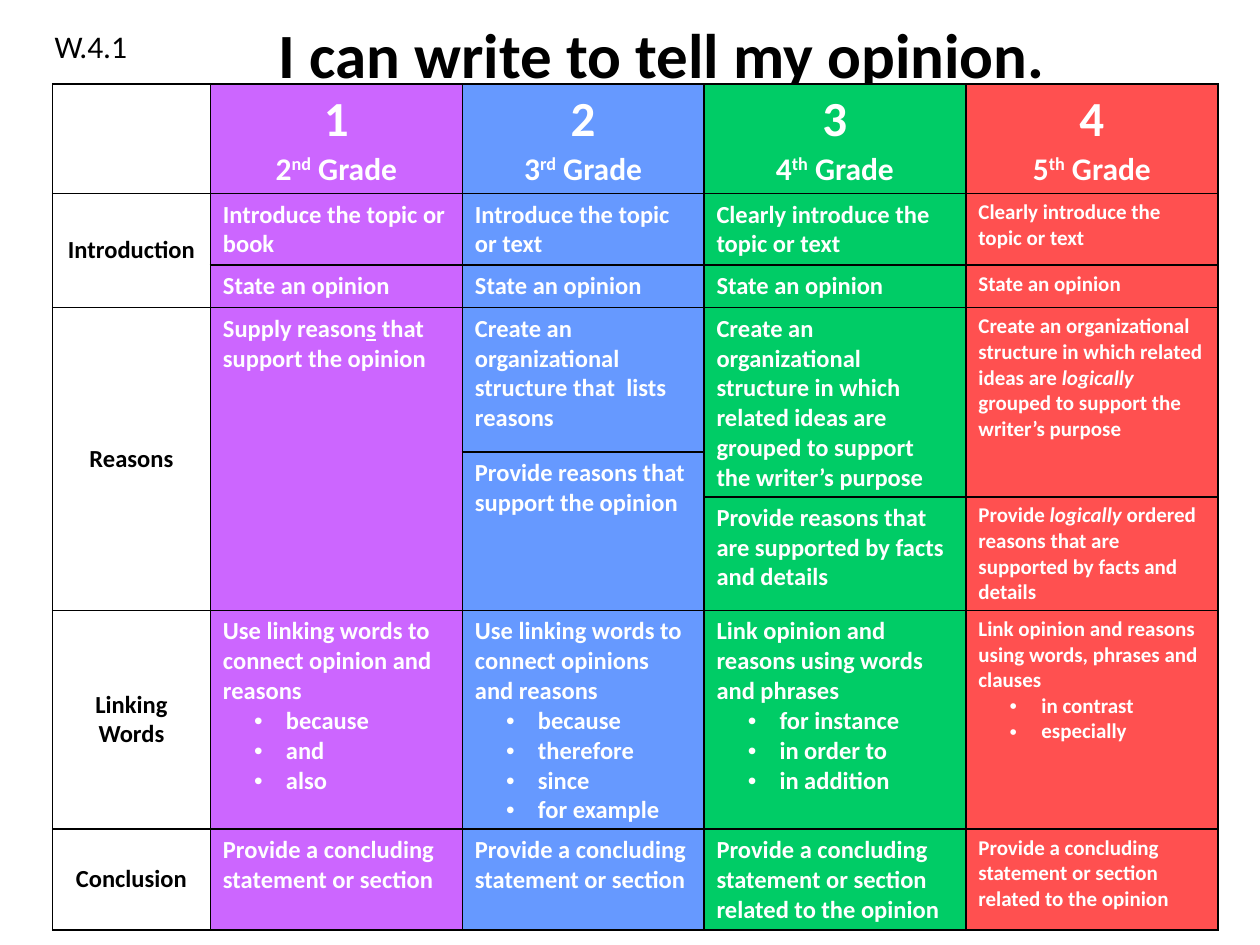
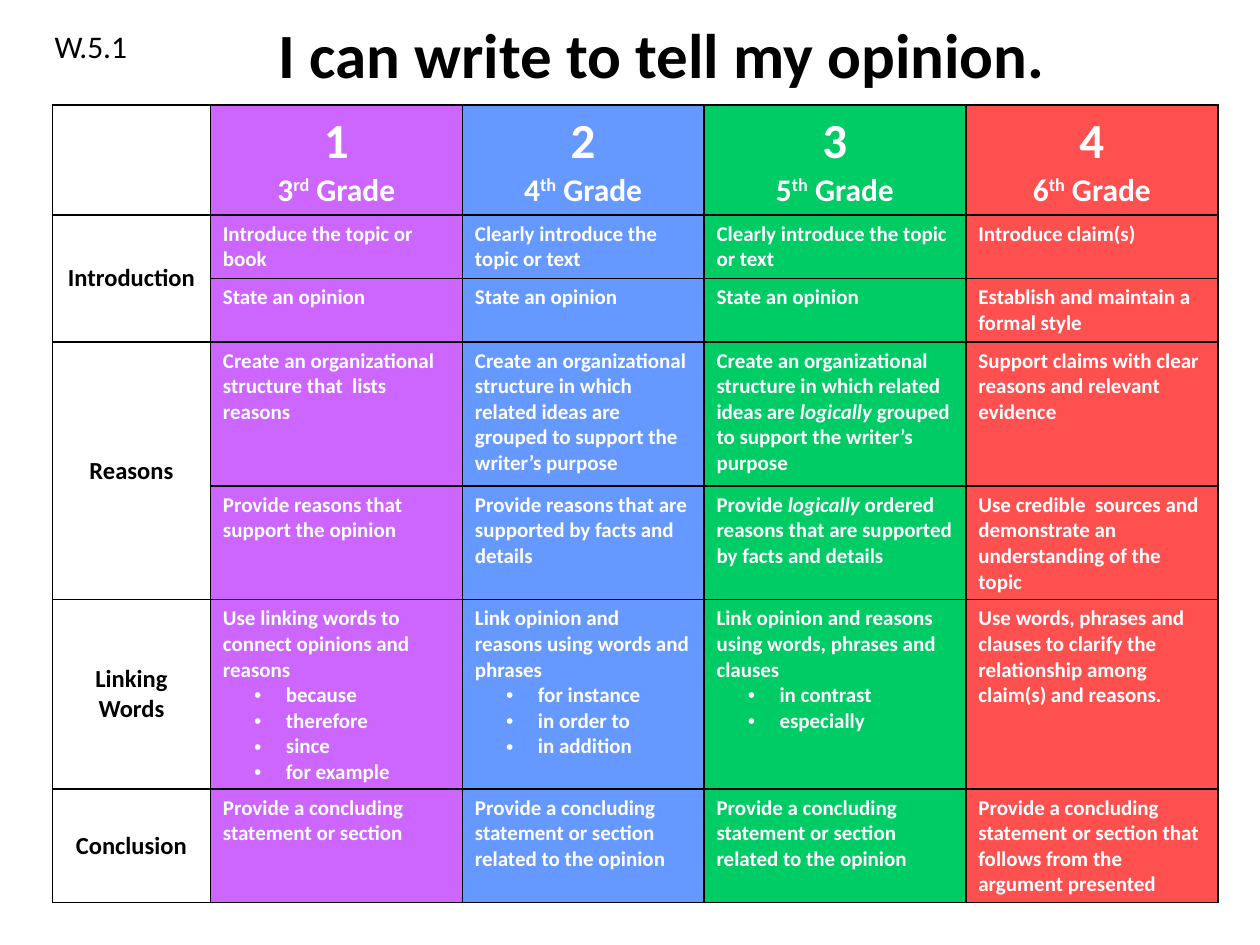
import lxml.etree
import pptx
import pptx.dml.color
import pptx.enum.text
import pptx.oxml.ns
import pptx.util
from pptx.util import Cm

# Shared style
BLACK = pptx.dml.color.RGBColor(0x00, 0x00, 0x00)
WHITE = pptx.dml.color.RGBColor(0xFF, 0xFF, 0xFF)
PURPLE = pptx.dml.color.RGBColor(0xCC, 0x66, 0xFF)
BLUE = pptx.dml.color.RGBColor(0x66, 0x99, 0xFF)
GREEN = pptx.dml.color.RGBColor(0x00, 0xCC, 0x66)
RED = pptx.dml.color.RGBColor(0xFF, 0x50, 0x50)
LEVEL_FILLS = [PURPLE, BLUE, GREEN, RED]
FONT = "Calibri"
CENTER = pptx.enum.text.PP_ALIGN.CENTER
MIDDLE = pptx.enum.text.MSO_ANCHOR.MIDDLE
COLUMN_WIDTHS = [3.18, 5.08, 4.87, 5.28, 5.08]

# Text between two marks takes that mark's style
MARKS = {"^": ("baseline", "30000"), "*": ("i", "1"), "_": ("u", "sng")}

# Wording by grade; lines after the first in a cell are bullets
TITLE = "I can write to tell my opinion."
LABELS = ["", "Introduction", "Reasons", "Linking Words", "Conclusion"]
ORDINALS = {2: "nd", 3: "rd", 4: "th", 5: "th", 6: "th"}
INTRODUCE_BOOK = "Introduce the topic or book"
INTRODUCE_CLEARLY = "Clearly introduce the topic or text"
STATE = "State an opinion"
CONCLUDE = "Provide a concluding statement or section"
CONCLUDE_RELATED = CONCLUDE + " related to the opinion"
GRADES = {
    2: [INTRODUCE_BOOK, STATE,
        "Supply reason_s_ that support the opinion",
        "Use linking words to connect opinion and reasons\nbecause\nand\nalso",
        CONCLUDE],
    3: ["Introduce the topic or text", STATE,
        "Create an organizational structure that  lists reasons",
        "Provide reasons that support the opinion",
        "Use linking words to connect opinions and reasons"
        "\nbecause\ntherefore\nsince\nfor example",
        CONCLUDE],
    4: [INTRODUCE_CLEARLY, STATE,
        "Create an organizational structure in which related ideas are "
        "grouped to support the writer’s purpose",
        "Provide reasons that are supported by facts and details",
        "Link opinion and reasons using words and phrases"
        "\nfor instance\nin order to\nin addition",
        CONCLUDE_RELATED],
    5: [INTRODUCE_CLEARLY, STATE,
        "Create an organizational structure in which related ideas are "
        "*logically* grouped to support the writer’s purpose",
        "Provide *logically* ordered  reasons that are supported by facts and details",
        "Link opinion and reasons using words, phrases and clauses"
        "\nin contrast\nespecially",
        CONCLUDE_RELATED],
    6: ["Introduce claim(s)", "Establish and maintain a formal style",
        "Support claims with clear reasons and relevant evidence",
        "Use credible  sources and demonstrate an understanding of the topic",
        "Use words, phrases and clauses to clarify the relationship among "
        "claim(s) and reasons.",
        CONCLUDE + " that follows from the argument presented"],
}


class RubricDeck:
    def __init__(self):
        self.deck = pptx.Presentation()
        self.deck.slide_width, self.deck.slide_height = Cm(25.4), Cm(19.05)
        self.slide = None

    def add_slide(self, standard):
        self.slide = self.deck.slides.add_slide(self.deck.slide_layouts[6])
        self.add_text(TITLE, 2.54, -0.2, 21.59, 2.54, 36, True, CENTER, MIDDLE)
        self.add_text(standard, 0.85, 0.42, 3.6, 1.03, 18)

    def set_text(self, paragraph, text, size, color, bold=False, align=None):
        for mark, (attribute, value) in MARKS.items():
            if mark in text:
                break
        for index, part in enumerate(text.split(mark)):
            run = paragraph.add_run()
            run.text = part
            if index % 2:
                run._r.get_or_add_rPr().set(attribute, value)
        paragraph.alignment = align
        font = paragraph.font
        font.name, font.size, font.bold = FONT, pptx.util.Pt(size), bold
        font.color.rgb = color

    def add_text(self, text, left, top, width, height, size, bold=False,
                 align=None, anchor=None):
        box = self.slide.shapes.add_textbox(Cm(left), Cm(top), Cm(width), Cm(height))
        frame = box.text_frame
        frame.word_wrap = True
        frame.vertical_anchor = anchor
        self.set_text(frame.paragraphs[0], text, size, BLACK, bold, align)

    def add_bullet(self, paragraph):
        properties = paragraph._p.get_or_add_pPr()
        properties.set("marL", str(Cm(1.27)))
        properties.set("indent", str(-Cm(0.64)))
        for tag, name, value in (("a:buFont", "typeface", "Arial"),
                                 ("a:buChar", "char", "•")):
            lxml.etree.SubElement(properties, pptx.oxml.ns.qn(tag)).set(name, value)

    def add_borders(self, cell):
        properties = cell._tc.get_or_add_tcPr()
        for position, side in enumerate(("a:lnL", "a:lnR", "a:lnT", "a:lnB")):
            line = lxml.etree.Element(pptx.oxml.ns.qn(side), w=str(pptx.util.Pt(1)))
            fill = lxml.etree.SubElement(line, pptx.oxml.ns.qn("a:solidFill"))
            lxml.etree.SubElement(fill, pptx.oxml.ns.qn("a:srgbClr"), val=str(BLACK))
            properties.insert(position, line)

    def fill_column(self, rubric, column, texts, spans, set_cell):
        row = 0
        for text, span in zip(texts, spans):
            cell = rubric.cell(row, column)
            if span > 1:
                cell.merge(rubric.cell(row + span - 1, column))
            set_cell(cell, text, row == 0)
            row += span

    def set_label(self, cell, text, is_header):
        cell.vertical_anchor = MIDDLE
        self.set_text(cell.text_frame.paragraphs[0], text, 14, BLACK, True, CENTER)

    def set_level(self, cell, text, is_header, size):
        frame = cell.text_frame
        for index, line in enumerate(text.split("\n")):
            paragraph = frame.add_paragraph() if index else frame.paragraphs[0]
            if is_header:
                self.set_text(paragraph, line, 18 if index else 28, WHITE, True, CENTER)
            else:
                if index:
                    self.add_bullet(paragraph)
                self.set_text(paragraph, line, size, WHITE, True)

    def add_rubric(self, top, heights, label_spans, levels):
        """Each level is (grade, texts, row spans, text size)."""
        rubric = self.slide.shapes.add_table(
            len(heights), len(COLUMN_WIDTHS), Cm(1.06), Cm(top),
            Cm(sum(COLUMN_WIDTHS)), Cm(sum(heights))).table
        rubric.first_row = rubric.horz_banding = False
        for column, width in zip(rubric.columns, COLUMN_WIDTHS):
            column.width = Cm(width)
        for row, height in zip(rubric.rows, heights):
            row.height = Cm(height)
            for cell, color in zip(row.cells, [WHITE] + LEVEL_FILLS):
                cell.fill.solid()
                cell.fill.fore_color.rgb = color
                self.add_borders(cell)
        self.fill_column(rubric, 0, LABELS, label_spans, self.set_label)
        for number, (grade, texts, spans, size) in enumerate(levels, 1):
            header = f"{number}\n{grade}^{ORDINALS[grade]}^ Grade"
            self.fill_column(
                rubric, number, [header] + texts, spans,
                lambda cell, text, is_header: self.set_level(cell, text, is_header, size))


def main():
    rubrics = RubricDeck()

    # Fourth grade standard
    rubrics.add_slide("W.4.1")
    late_split = [1, 1, 1, 2, 1, 1, 1]
    rubrics.add_rubric(
        1.69, [2.21, 1.43, 0.86, 2.91, 0.9, 2.29, 4.4, 2.04], [1, 2, 3, 1, 1],
        [(2, GRADES[2], [1, 1, 1, 3, 1, 1], 14),
         (3, GRADES[3], [1, 1, 1, 1, 2, 1, 1], 14),
         (4, GRADES[4], late_split, 14),
         (5, GRADES[5], late_split, 12)])

    # Fifth grade standard
    rubrics.add_slide("W.5.1")
    wording = {**GRADES, 3: [INTRODUCE_BOOK] + GRADES[3][1:]}
    rubrics.add_rubric(
        2.12, [2.21, 1.28, 1.28, 2.91, 2.29, 3.81, 2.29], [1, 2, 2, 1, 1],
        [(grade, wording[grade], [1] * 7, 12) for grade in range(3, 7)])

    rubrics.deck.save("out.pptx")


if __name__ == "__main__":
    main()
